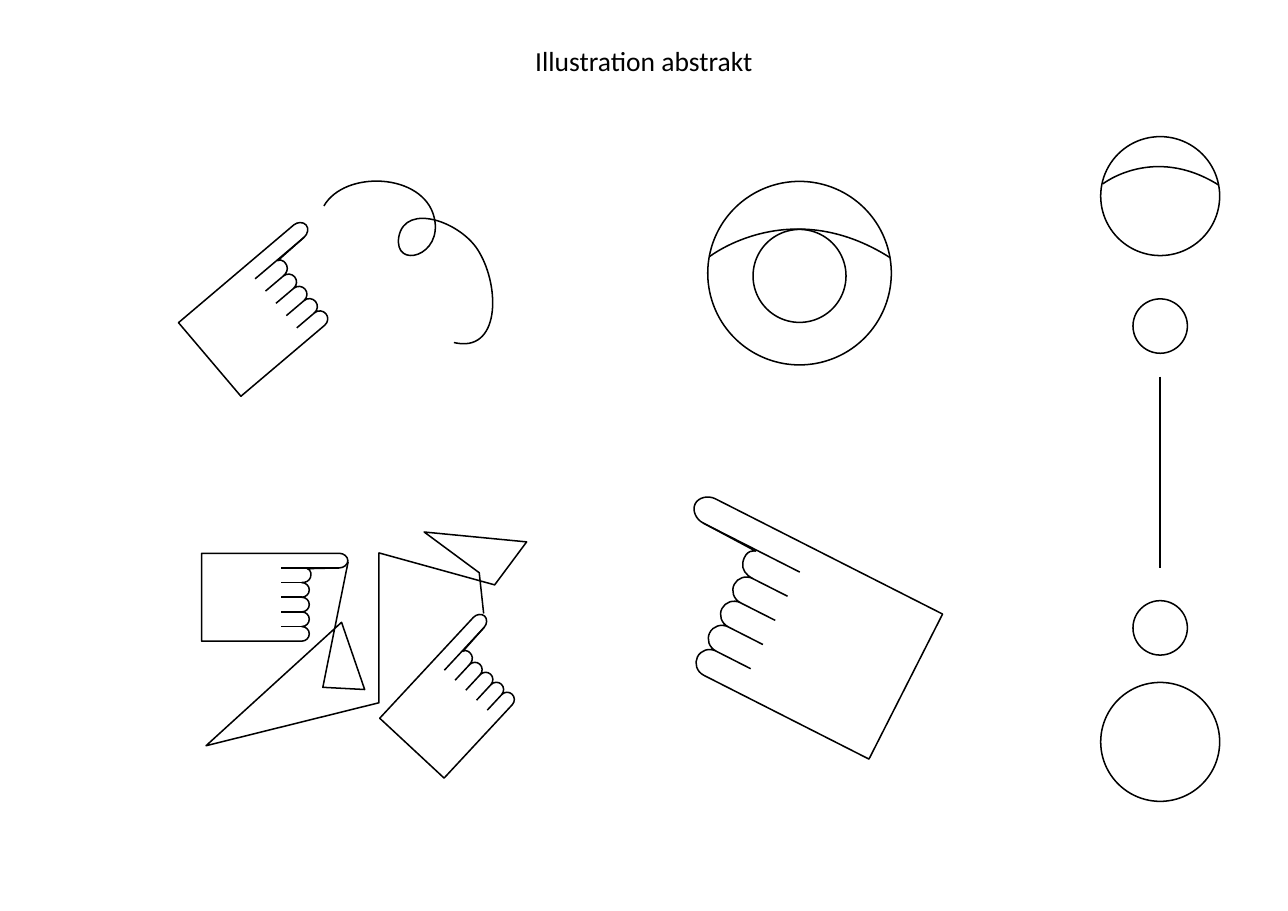
from math import cos, sin, radians
from lxml import etree
from pptx import Presentation
from pptx.dml.color import RGBColor
from pptx.enum.shapes import MSO_CONNECTOR, MSO_SHAPE
from pptx.enum.text import MSO_ANCHOR, MSO_AUTO_SIZE, PP_ALIGN
from pptx.oxml.ns import qn
from pptx.util import Inches, Pt

OVAL, LINE = MSO_SHAPE.OVAL, MSO_CONNECTOR.STRAIGHT
MIDDLE, CENTER, FIXED = MSO_ANCHOR.MIDDLE, PP_ALIGN.CENTER, MSO_AUTO_SIZE.NONE
INK = {"text": "000000", "line": "000000"}
COLS = 116.9

deck = Presentation()
deck.slide_width, deck.slide_height = Inches(11.69), Inches(8.27)
CELL = deck.slide_width / COLS
slide = deck.slides.add_slide(deck.slide_layouts[5])


def write(shape, text, font="Calibri", size=18, color=INK["text"], align=CENTER):
    frame = shape.text_frame
    frame.margin_left = frame.margin_right = 0
    frame.margin_top = frame.margin_bottom = 0
    frame.word_wrap, frame.auto_size = True, FIXED
    frame.vertical_anchor = MIDDLE
    para = frame.paragraphs[0]
    para.alignment = align
    run = para.add_run()
    run.text = text
    run.font.name, run.font.size = font, Pt(size)
    run.font.color.rgb = RGBColor.from_string(color)


def trace(group, route, place=lambda x, y: (x * CELL, y * CELL), close=False):
    """Draw a route of points (x, y) and cubic curves (three pairs in a row)."""
    dots = [place(*leg[i:i + 2]) for leg in route for i in range(0, len(leg), 2)]
    pen = group.shapes.build_freeform(*dots[0], scale=1.0)
    pen.add_line_segments(dots[1:], close=close)
    shape = pen.convert_to_shape()
    # Each curve takes over the points of three straight steps
    steps = iter(list(shape._element.iter(qn("a:lnTo"))))
    for leg in route[1:]:
        step = next(steps)
        if len(leg) == 6:
            step.tag = qn("a:cubicBezTo")
            for _ in range(2):
                extra = next(steps)
                step.append(extra[0])
                extra.getparent().remove(extra)
    return shape


# Title
title = slide.shapes.title
title.left, title.top = int(8.04 * CELL), int(3.5 * CELL)
title.width, title.height = int(100.8 * CELL), int(3.9 * CELL)
write(title, "Illustration abstrakt")

# One group for each drawing
shards, signal, doodle, fist, eye = [slide.shapes.add_group_shape() for _ in range(5)]
parts, lines = [], []

# Hand outline, in finger widths from the wrist corner
outline = [(0, 6), (6.83, 6)]
for low in (6, 5, 4, 3):
    outline += [(7.13, low, 7.35, low - 0.23, 7.35, low - 0.5),
                (7.35, low - 0.77, 7.13, low - 1, 6.83, low - 1)]
outline += [(7.13, 2, 7.35, 1.88, 7.43, 1.65), (7.58, 1.12, 7.2, 1.05, 7.2, 1.05),
            (9.4, 1), (9.7, 1, 9.98, 0.77, 9.98, 0.5),
            (9.98, 0.23, 9.7, 0, 9.4, 0), (0, 0)]

# Hands: group, wrist corner, finger width, turn in degrees, mirror
hands = [(shards, 18.3, 50.23, 1.33, 0, 1), (shards, 34.47, 65.2, 1.33, -47.1, 1),
         (doodle, 16.2, 29.3, 1.46, -40.3, 1), (fist, 85.55, 55.75, 2.46, 206.9, -1)]
for group, left, top, unit, turn, flip in hands:
    c, s = cos(radians(turn)) * unit, sin(radians(turn)) * unit

    def place(x, y):
        return ((left + c * x - s * flip * y) * CELL,
                (top + s * x + c * flip * y) * CELL)

    parts.append(trace(group, outline, place, close=True))
    for row in range(1, 6):
        tip = 9.4 if row == 1 else 6.83
        ends = [int(v) for v in place(tip, row) + place(5.4, row)]
        lines.append(group.shapes.add_connector(LINE, *ends))

# Open outlines: shards, scribble and eyelids
routes = [
    (shards, [(43.9, 55.7), (43.5, 52), (38.5, 48.3), (47.8, 49.2), (44.9, 53.1),
              (34.4, 50.2), (34.4, 63.8), (18.7, 67.7), (31, 56.5), (33.1, 62.6),
              (29.3, 62.4), (31.6, 51)]),
    (doodle, [(29.4, 18.7), (31.3, 15.4, 38.4, 15.7, 39.4, 19.7),
              (40.3, 23.3, 35.7, 24.5, 36.2, 21.5),
              (36.8, 18.3, 42, 20.2, 43.5, 22.9),
              (45.4, 26.1, 45.4, 32.1, 41.2, 31.1)]),
    (signal, [(100.1, 16.7), (100.1, 16.7, 104.7, 13.1, 110.6, 16.8)]),
    (eye, [(64.4, 23.3), (64.4, 23.3, 71.7, 17.6, 80.8, 23.4)]),
]
for group, route in routes:
    parts.append(trace(group, route))

# Circles: group, centre, radius
AXIS = 105.3
rings = [(signal, AXIS, 17.8, 5.4), (signal, AXIS, 29.6, 2.47),
         (signal, AXIS, 57, 2.47), (signal, AXIS, 67.35, 5.4),
         (eye, 72.57, 24.8, 8.33), (eye, 72.57, 25.05, 4.22)]
for group, x, y, r in rings:
    box = [int(v * CELL) for v in (x - r, y - r, 2 * r, 2 * r)]
    parts.append(group.shapes.add_shape(OVAL, *box))

# Upright line between the small circles
ends = [int(v * CELL) for v in (AXIS, 34.2, AXIS, 51.6)]
lines.append(signal.shapes.add_connector(LINE, *ends))

# Thin black lines, no fill, no shadow
for part in parts + lines:
    part.line.color.rgb = RGBColor.from_string(INK["line"])
    part.line.width = Pt(1)
for part in parts:
    part.fill.background()
    part.shadow.inherit = False
for line in lines:
    etree.SubElement(line._element.spPr, qn("a:effectLst"))

deck.save("out.pptx")
